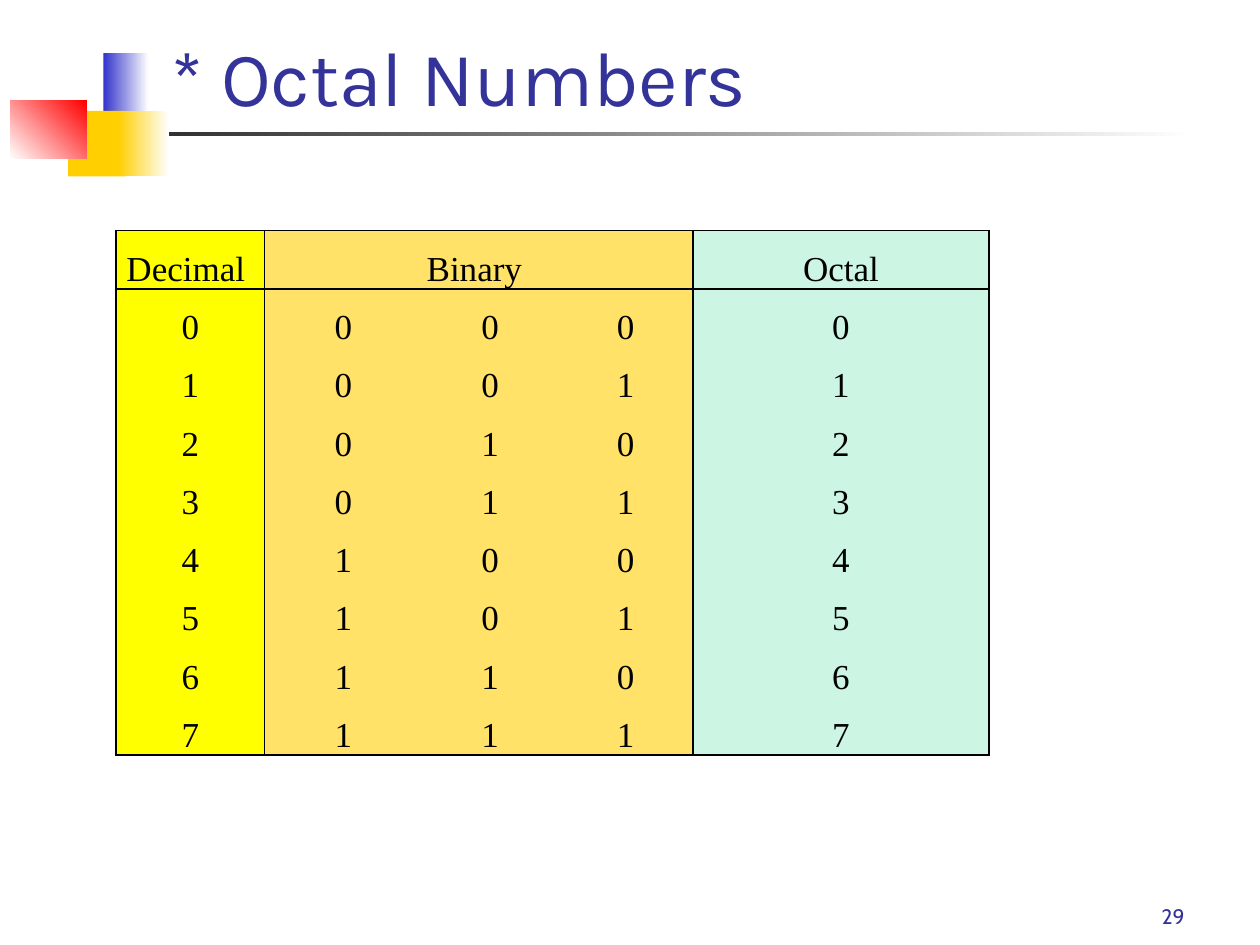
from dataclasses import dataclass

from lxml.etree import SubElement
from pptx import Presentation
from pptx.dml.color import RGBColor
from pptx.enum.shapes import MSO_SHAPE
from pptx.enum.text import MSO_ANCHOR, MSO_AUTO_SIZE, PP_ALIGN
from pptx.oxml.ns import qn
from pptx.util import Inches, Pt


@dataclass(frozen=True)
class Theme:
    ink: str = "333399"
    black: str = "000000"
    white: str = "FFFFFF"
    rule: str = "1C1C1C"
    blue: str = "3333CC"
    gold: str = "FFCF01"
    red: str = "FF0000"
    decimal: str = "FFFF00"
    binary: str = "FFE267"
    octal: str = "CCF5E3"
    title_font: str = "Karla"
    number_font: str = "Cabin"
    table_font: str = "Times New Roman"
    title_size: int = 44
    table_size: int = 20
    number_size: int = 12


THEME = Theme()
COLUMN_WIDTHS = (1.18, 1.25, 1.08, 1.07, 2.35)
COLUMN_FILLS = (THEME.decimal,) + (THEME.binary,) * 3 + (THEME.octal,)
GROUP_STARTS, GROUP_ENDS = (0, 1, 4), (0, 3, 4)
ROW_HEIGHT = 0.45


def style_paragraph(para, font_name, size, color, alignment):
    para.alignment = alignment
    para.font.name = font_name
    para.font.size = Pt(size)
    para.font.color.rgb = RGBColor.from_string(color)


def add_block(slide, left, top, width, height, colors, angle=0):
    """Add a borderless rectangle with a solid or two-colour gradient fill."""
    block = slide.shapes.add_shape(
        MSO_SHAPE.RECTANGLE, Inches(left), Inches(top), Inches(width), Inches(height))
    block.shadow.inherit = False
    block.line.fill.background()
    if len(colors) == 1:
        block.fill.solid()
        block.fill.fore_color.rgb = RGBColor.from_string(colors[0])
    else:
        block.fill.gradient()
        block.fill.gradient_angle = angle
        for stop, color in zip(block.fill.gradient_stops, colors):
            stop.color.rgb = RGBColor.from_string(color)


def add_decoration(slide):
    add_block(slide, 0.48, 1.05, 9, 0.03, (THEME.rule, THEME.white))
    add_block(slide, 0.82, 0.42, 0.36, 0.52, (THEME.blue, THEME.white))
    add_block(slide, 0.54, 0.88, 0.46, 0.52, (THEME.gold,))
    add_block(slide, 0.94, 0.88, 0.4, 0.52, (THEME.gold, THEME.white))
    add_block(slide, 0.08, 0.8, 0.61, 0.46, (THEME.white, THEME.red), angle=45)


def set_title(slide, text):
    title = slide.shapes.title
    title.left, title.top = Inches(1.26), Inches(0.08)
    title.width, title.height = Inches(8.52), Inches(0.94)
    frame = title.text_frame
    frame.text = text
    frame.auto_size = MSO_AUTO_SIZE.NONE
    frame.vertical_anchor = MSO_ANCHOR.BOTTOM
    style_paragraph(frame.paragraphs[0], THEME.title_font, THEME.title_size,
                    THEME.ink, PP_ALIGN.LEFT)


def set_borders(cell, edges):
    """Draw the edges marked true and clear the others."""
    properties = cell._tc.get_or_add_tcPr()
    for tag, visible in edges.items():
        line = SubElement(properties, qn(f"a:{tag}"), w=str(Pt(1)))
        if visible:
            fill = SubElement(line, qn("a:solidFill"))
            SubElement(fill, qn("a:srgbClr"), val=THEME.black)
        else:
            SubElement(line, qn("a:noFill"))


def style_cell(cell, text, fill):
    cell.text = text
    cell.margin_left = cell.margin_right = Inches(0.07)
    cell.margin_top = cell.margin_bottom = 0
    cell.fill.solid()
    cell.fill.fore_color.rgb = RGBColor.from_string(fill)
    para = cell.text_frame.paragraphs[0]
    para.line_spacing = 1.5
    style_paragraph(para, THEME.table_font, THEME.table_size, THEME.black, PP_ALIGN.CENTER)


def add_number_table(slide):
    # Each number appears in decimal, as three bits, and in octal
    rows = [("Decimal ", "Binary ", "", "", "Octal")]
    rows += [(str(n), *f"{n:03b}", f"{n:o}") for n in range(8)]
    last = len(rows) - 1
    table = slide.shapes.add_table(
        len(rows), len(COLUMN_WIDTHS), Inches(0.92), Inches(1.83),
        Inches(sum(COLUMN_WIDTHS)), Inches(ROW_HEIGHT * len(rows))).table
    table.first_row = table.horz_banding = False
    for column, width in zip(table.columns, COLUMN_WIDTHS):
        column.width = Inches(width)
    for r, values in enumerate(rows):
        table.rows[r].height = Inches(ROW_HEIGHT)
        for c, text in enumerate(values):
            cell = table.cell(r, c)
            set_borders(cell, {
                "lnL": r == 0 or c in GROUP_STARTS,
                "lnR": r == 0 or c in GROUP_ENDS,
                "lnT": r in (0, 1),
                "lnB": r in (0, last),
            })
            style_cell(cell, text, COLUMN_FILLS[c])
    table.cell(0, 1).merge(table.cell(0, 3))


def add_page_number(slide, number):
    box = slide.shapes.add_textbox(Inches(7.42), Inches(6.92), Inches(2.08), Inches(0.5))
    frame = box.text_frame
    frame.word_wrap = True
    frame.vertical_anchor = MSO_ANCHOR.BOTTOM
    frame.text = number
    style_paragraph(frame.paragraphs[0], THEME.number_font, THEME.number_size,
                    THEME.ink, PP_ALIGN.RIGHT)


def main():
    deck = Presentation()
    deck.slide_width, deck.slide_height = Inches(10), Inches(7.5)
    slide = deck.slides.add_slide(deck.slide_layouts[5])  # title only
    add_decoration(slide)
    set_title(slide, "* Octal Numbers")
    add_number_table(slide)
    add_page_number(slide, "29")
    deck.save("out.pptx")


if __name__ == "__main__":
    main()
